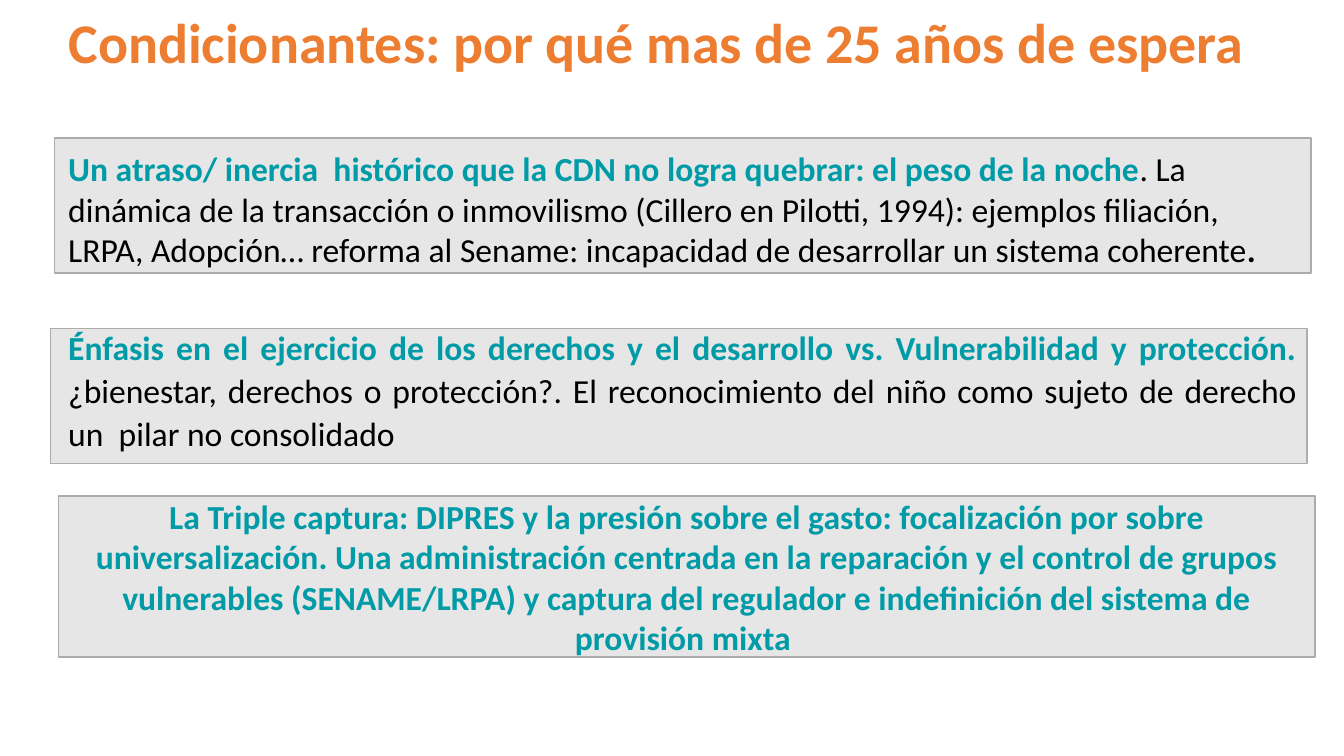
from pptx import Presentation
from pptx.dml.color import RGBColor
from pptx.enum.shapes import MSO_SHAPE
from pptx.enum.text import MSO_ANCHOR, MSO_AUTO_SIZE, PP_ALIGN
from pptx.util import Cm, Pt

ORANGE = RGBColor(0xED, 0x7D, 0x31)
TEAL = RGBColor(0x00, 0x9B, 0xA6)
BLACK = RGBColor(0x00, 0x00, 0x00)
PANEL = RGBColor(0xE7, 0xE6, 0xE6)
BORDER = RGBColor(0xAF, 0xAB, 0xAB)
RECT = MSO_SHAPE.RECTANGLE
TOP, MIDDLE = MSO_ANCHOR.TOP, MSO_ANCHOR.MIDDLE
LEFT, CENTER, JUSTIFY = PP_ALIGN.LEFT, PP_ALIGN.CENTER, PP_ALIGN.JUSTIFY
NO_FIT = MSO_AUTO_SIZE.NONE


def write(shape, anchor, para_format, size, runs):
    tf = shape.text_frame
    for name, value in {"word_wrap": True, "auto_size": NO_FIT,
                        "vertical_anchor": anchor}.items():
        setattr(tf, name, value)
    p = tf.paragraphs[0]
    for name, value in para_format.items():
        setattr(p, name, value)
    for text, color, bold in runs:
        r = p.add_run()
        r.text = text
        for name, value in {"name": "Calibri", "size": Pt(size), "bold": bold}.items():
            setattr(r.font, name, value)
        r.font.color.rgb = color


prs = Presentation()
prs.slide_width, prs.slide_height = Cm(33.87), Cm(19.05)
s = prs.slides.add_slide(prs.slide_layouts[5])

# Title
title = s.shapes.title
for name, value in {"left": 1.47, "top": 0.05, "width": 31.5, "height": 1.96}.items():
    setattr(title, name, Cm(value))
write(title, TOP, {"alignment": LEFT}, 40,
      [("Condicionantes: por qué mas de 25 años de espera", ORANGE, True)])

# Grey panels, from bottom to top
panels = []
for left, top, height in [(1.47, 12.5, 4.06), (1.27, 8.28, 3.4), (1.37, 3.48, 3.4)]:
    sp = s.shapes.add_shape(RECT, Cm(left), Cm(top), Cm(31.67), Cm(height))
    sp.shadow.inherit = False
    sp.fill.solid()
    sp.fill.fore_color.rgb = PANEL
    sp.line.color.rgb = BORDER
    sp.line.width = Pt(1)
    panels.append(sp)

# Text inside the bottom panel
write(panels[0], MIDDLE, {"alignment": CENTER}, 24, [
    ("La Triple captura: DIPRES y la presión sobre el gasto: focalización por sobre "
     "universalización. Una administración centrada en la reparación y el control de "
     "grupos vulnerables (SENAME/LRPA) y captura del regulador e indefinición del "
     "sistema de provisión mixta ", TEAL, True)])

# Text over the two upper panels
statements = [
    (3.61, 4.14, {"alignment": LEFT}, [
        ("Un atraso/ inercia  histórico que la CDN no logra quebrar: el peso de la noche",
         TEAL, True),
        (". La dinámica de la transacción o inmovilismo (Cillero en Pilotti, 1994): "
         "ejemplos filiación, LRPA, Adopción… reforma al Sename: incapacidad de "
         "desarrollar un sistema coherente", BLACK, False),
        (".", BLACK, True)]),
    (8.03, 4.65, {"alignment": JUSTIFY, "line_spacing": 1.07, "space_after": Pt(8)}, [
        ("Énfasis en el ejercicio de los derechos y el desarrollo vs. Vulnerabilidad y "
         "protección. ", TEAL, True),
        ("¿bienestar, derechos o protección?. El reconocimiento del niño como sujeto de "
         "derecho un  pilar no consolidado ", BLACK, False)]),
]
for top, height, para_format, runs in statements:
    box = s.shapes.add_textbox(Cm(1.47), Cm(top), Cm(31.47), Cm(height))
    write(box, TOP, para_format, 24, runs)

prs.save("out.pptx")
